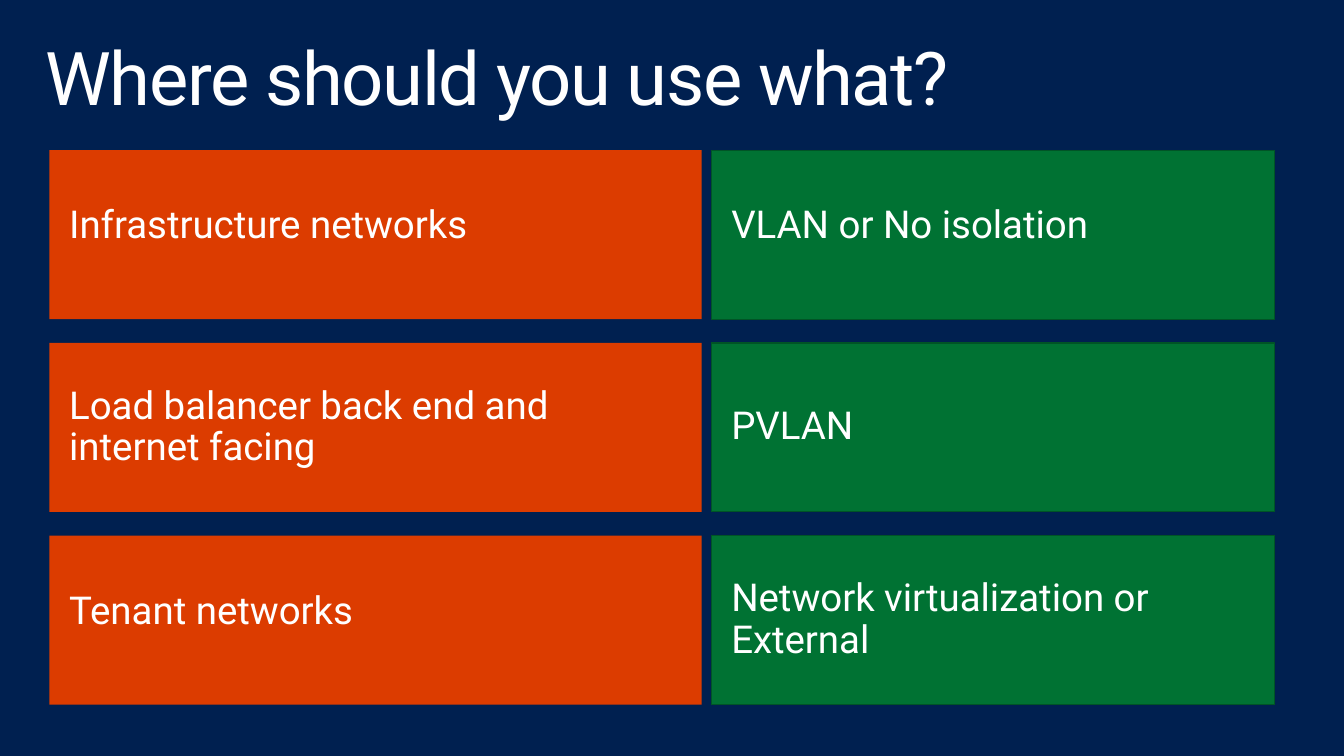
from pptx import Presentation
from pptx import util as u
from pptx.dml.color import RGBColor
from pptx.enum import shapes, text

# Content: one row per network type, each cell a list of paragraphs
TITLE = "Where should you use what?"
ROWS = [
    (["Infrastructure networks"], ["VLAN or No isolation"]),
    (["Load balancer back end and internet facing"], ["PVLAN"]),
    (["Tenant networks"], ["Network virtualization or", "External"]),
]
RAISED = {(0, 0), (0, 1), (2, 0)}  # row, column of text set above the middle

# Look
FONT = "Roboto"
COLORS = {"back": "002050", "text": "FFFFFF", "network": "DC3C00",
          "isolation": "007233", "edge": "005426"}
COLUMNS = [  # left, width, fill, line
    (0.5, 6.6, "network", None),
    (7.2, 5.7, "isolation", "edge"),
]
TOP, ROW_HEIGHT, ROW_GAP = 1.52, 1.71, 0.24
RAISE = 0.17


def color(name):
    return RGBColor.from_string(COLORS[name])


def write(frame, paragraphs, size, insets, anchor):
    frame.word_wrap = True
    frame.auto_size = text.MSO_AUTO_SIZE.NONE
    frame.vertical_anchor = anchor
    (frame.margin_left, frame.margin_top,
     frame.margin_right, frame.margin_bottom) = map(u.Inches, insets)
    for index, words in enumerate(paragraphs):
        para = frame.add_paragraph() if index else frame.paragraphs[0]
        para.alignment = text.PP_ALIGN.LEFT
        para.line_spacing = 0.9
        para.space_before = u.Pt(0)
        span = para.add_run()
        span.text = words
        span.font.name = FONT
        span.font.size = u.Pt(size)
        span.font.color.rgb = color("text")


def add_cell(page, row, column, paragraphs):
    left, width, fill, line = COLUMNS[column]
    top = TOP + row * (ROW_HEIGHT + ROW_GAP)
    box = page.shapes.add_shape(
        shapes.MSO_SHAPE.RECTANGLE,
        *map(u.Inches, (left, top, width, ROW_HEIGHT)))
    box.shadow.inherit = False
    box.fill.solid()
    box.fill.fore_color.rgb = color(fill)
    if line:
        box.line.color.rgb = color(line)
        box.line.width = u.Pt(0.85)
    else:
        box.line.fill.background()
    bottom = 0.16 + (RAISE if (row, column) in RAISED else 0)
    write(box.text_frame, paragraphs, 28, (0.2, 0.16, 0.2, bottom),
          text.MSO_ANCHOR.MIDDLE)


def main():
    deck = Presentation()
    deck.slide_width, deck.slide_height = u.Inches(13.6), u.Inches(7.65)
    page = deck.slides.add_slide(deck.slide_layouts[5])
    page.background.fill.solid()
    page.background.fill.fore_color.rgb = color("back")

    # Title
    title = page.shapes.title
    title.left, title.top = u.Inches(0.3), u.Inches(0.32)
    title.width, title.height = u.Inches(13), u.Inches(1)
    write(title.text_frame, [TITLE], 54, (0.16, 0.1, 0.16, 0.1),
          text.MSO_ANCHOR.TOP)
    span = title.text_frame.paragraphs[0].runs[0]
    span.font._element.set("spc", "-100")  # tighter letters, 1 pt

    # Grid of networks and their isolation, column by column
    for column in range(len(COLUMNS)):
        for row, cells in enumerate(ROWS):
            add_cell(page, row, column, cells[column])

    deck.save("out.pptx")


if __name__ == "__main__":
    main()
